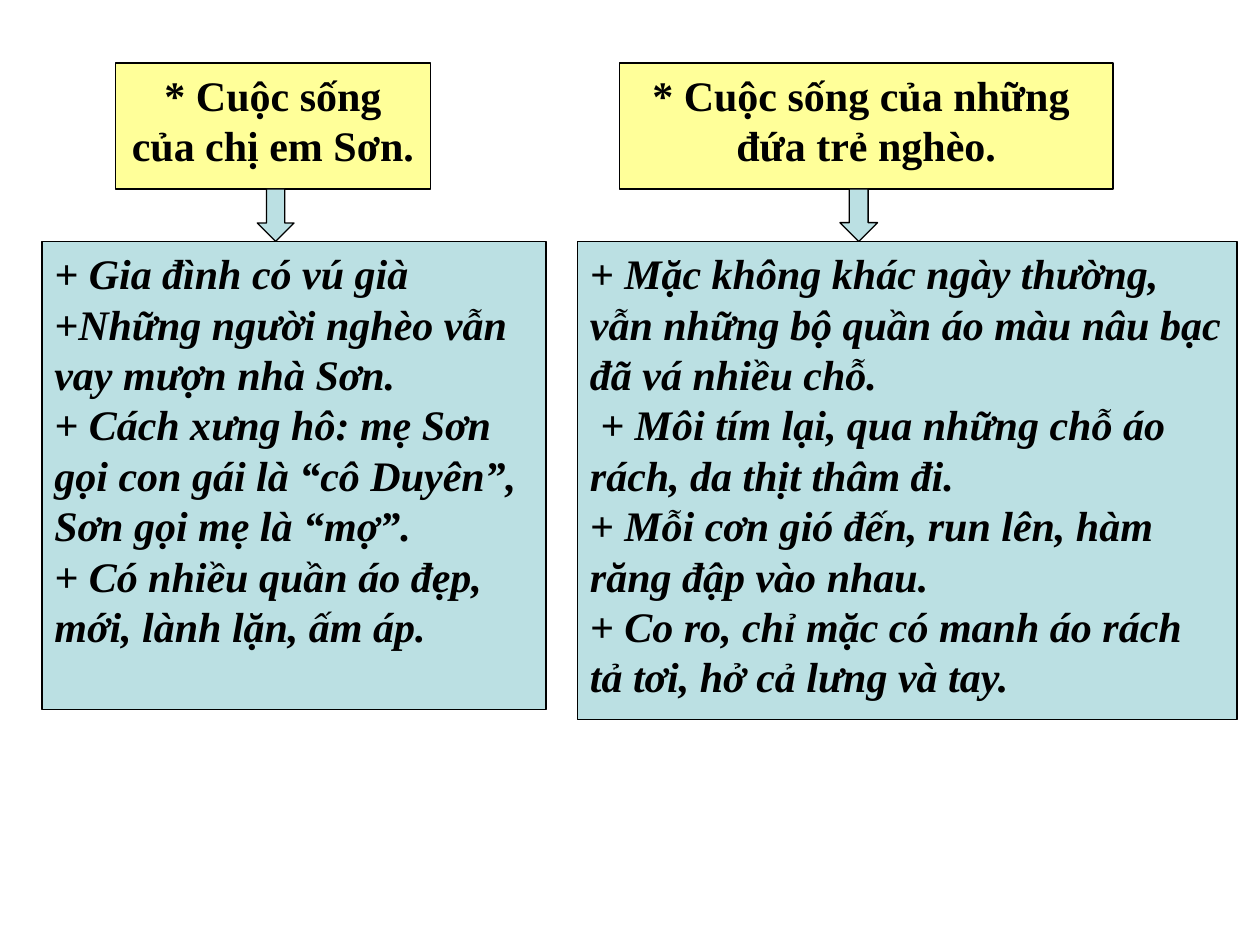
from pptx import Presentation
from pptx.dml.color import RGBColor
from pptx.enum.shapes import MSO_SHAPE
from pptx.enum.text import MSO_ANCHOR, PP_ALIGN
from pptx.util import Pt

RECTANGLE, DOWN_ARROW = MSO_SHAPE.RECTANGLE, MSO_SHAPE.DOWN_ARROW
TOP = MSO_ANCHOR.TOP
LEFT, CENTER = PP_ALIGN.LEFT, PP_ALIGN.CENTER

FONT, FONT_SIZE = "Times New Roman", 24
BLACK, YELLOW, TEAL = "000000", "FFFF99", "BBE0E3"
HEADING_TOP, HEADING_HEIGHT, ARROW_HEIGHT = 36, 72, 30

COLUMNS = [
    {
        "heading": ["* Cuộc sống của chị em Sơn."],
        "heading_span": (66, 180),
        "arrow_span": (147, 21),
        "details": [
            "+ Gia đình có vú già +Những người nghèo vẫn vay mượn nhà Sơn.",
            "+ Cách xưng hô: mẹ Sơn gọi con gái là “cô Duyên”, Sơn gọi mẹ là “mợ”.",
            "+ Có nhiều quần áo đẹp, mới, lành lặn, ấm áp.",
        ],
        "details_span": (24, 288),
        "details_height": 267.5,
    },
    {
        "heading": ["* Cuộc sống của những ", "đứa trẻ nghèo."],
        "heading_span": (354, 282),
        "arrow_span": (480, 21.5),
        "details": [
            "+ Mặc không khác ngày thường, vẫn những bộ quần áo màu nâu bạc đã vá nhiều chỗ.",
            " + Môi tím lại, qua những chỗ áo rách, da thịt thâm đi.",
            "+ Mỗi cơn gió đến, run lên, hàm răng đập vào nhau.",
            "+ Co ro, chỉ mặc có manh áo rách tả tơi, hở cả lưng và tay.",
        ],
        "details_span": (330, 376.8),
        "details_height": 273,
    },
]


def color(hex_code):
    return RGBColor.from_string(hex_code)


def add_block(slide, preset, span, top, height, fill):
    left, width = span
    block = slide.shapes.add_shape(preset, Pt(left), Pt(top), Pt(width), Pt(height))
    block.shadow.inherit = False
    block.fill.solid()
    block.fill.fore_color.rgb = color(fill)
    block.line.color.rgb = color(BLACK)
    block.line.width = Pt(0.75)
    return block


def write(block, paragraphs, align=LEFT, italic=False):
    frame = block.text_frame
    frame.word_wrap = True
    frame.vertical_anchor = TOP
    frame.text = "\n".join(paragraphs)
    for paragraph in frame.paragraphs:
        paragraph.alignment = align
        font = paragraph.font
        font.name, font.size = FONT, Pt(FONT_SIZE)
        font.bold, font.italic = True, italic
        font.color.rgb = color(BLACK)
        for run in paragraph.runs:
            run.font.name, run.font.size = FONT, Pt(FONT_SIZE)
            run.font.bold, run.font.italic = True, italic
            run.font.color.rgb = color(BLACK)


def main():
    deck = Presentation()
    deck.slide_width, deck.slide_height = Pt(720), Pt(540)
    slide = deck.slides.add_slide(deck.slide_layouts[6])
    arrow_top = HEADING_TOP + HEADING_HEIGHT
    details_top = arrow_top + ARROW_HEIGHT

    for column in COLUMNS:
        heading = add_block(slide, RECTANGLE, column["heading_span"],
                            HEADING_TOP, HEADING_HEIGHT, YELLOW)
        write(heading, column["heading"], align=CENTER)
        details = add_block(slide, RECTANGLE, column["details_span"],
                            details_top, column["details_height"], TEAL)
        write(details, column["details"], italic=True)

    for column in COLUMNS:
        add_block(slide, DOWN_ARROW, column["arrow_span"], arrow_top, ARROW_HEIGHT, TEAL)

    deck.save("out.pptx")


if __name__ == "__main__":
    main()
